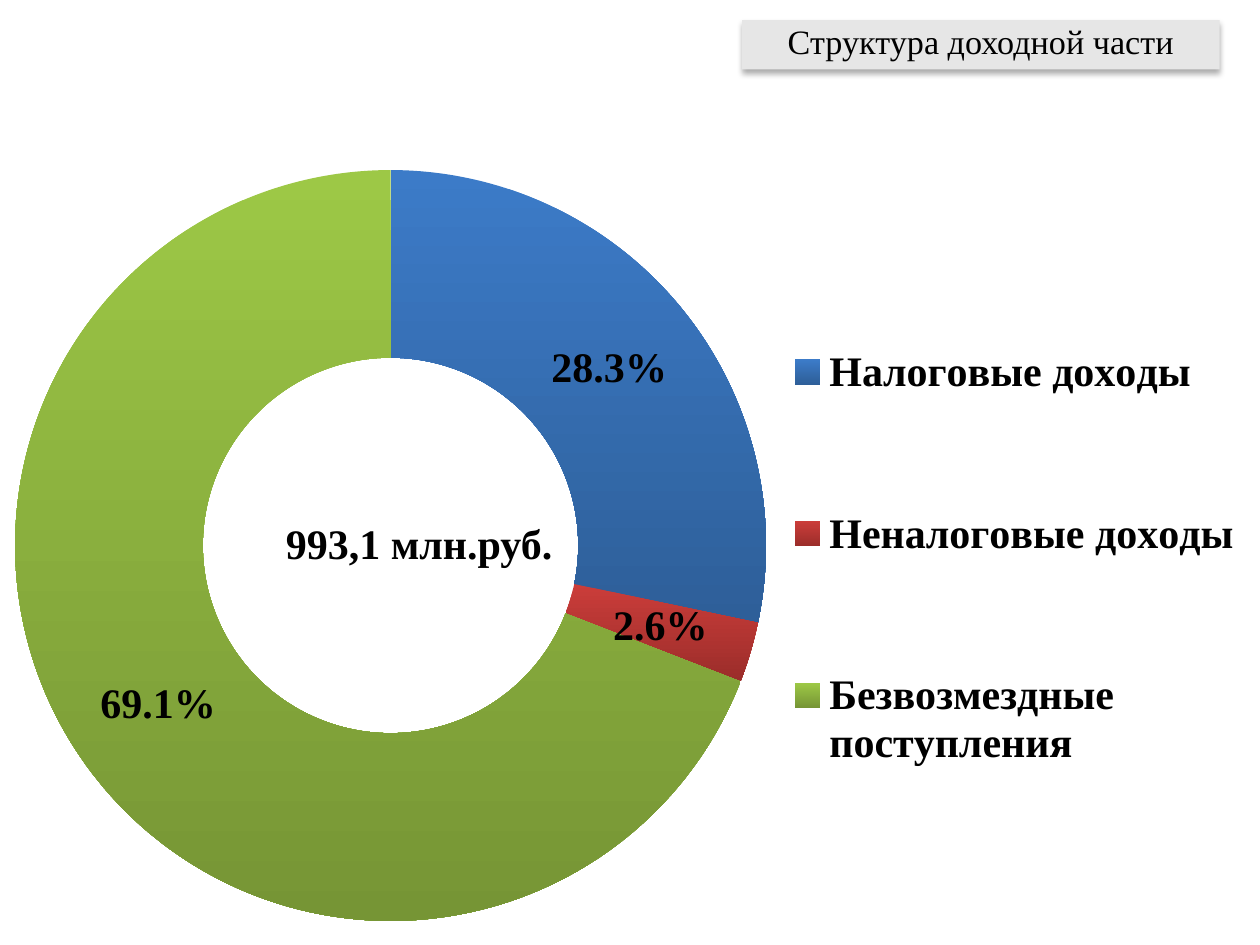
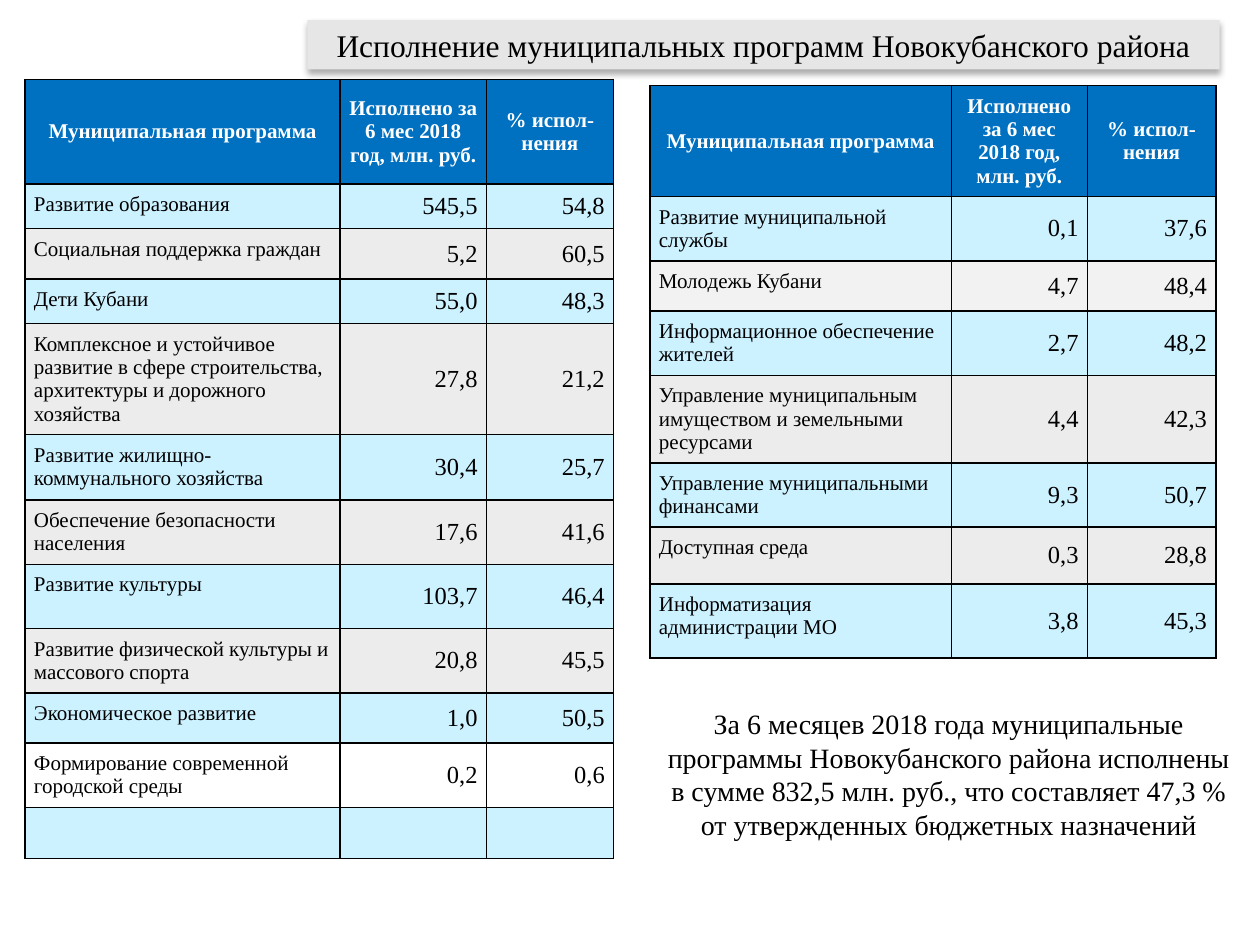
"""Builds two slides on district budget income and municipal programmes."""
from dataclasses import dataclass

from lxml import etree
from pptx import Presentation
from pptx import util as u
from pptx.chart.data import CategoryChartData
from pptx.dml.color import RGBColor
from pptx.enum import chart as charts
from pptx.enum import text
from pptx.oxml import parse_xml
from pptx.oxml.ns import nsdecls, qn

FONT = "Times New Roman"
BLACK = RGBColor(0x00, 0x00, 0x00)
WHITE = RGBColor(0xFF, 0xFF, 0xFF)
BAND_GREY = RGBColor(0xE6, 0xE6, 0xE6)
HEADER_BLUE = RGBColor(0x00, 0x70, 0xC0)
ROW_BLUE = RGBColor(0xCD, 0xF2, 0xFF)
ROW_GREY = RGBColor(0xEC, 0xEC, 0xEC)
ROW_PALE = RGBColor(0xF2, 0xF2, 0xF2)
LEFT, CENTER, RIGHT = text.PP_ALIGN.LEFT, text.PP_ALIGN.CENTER, text.PP_ALIGN.RIGHT
TOP, MIDDLE = text.MSO_ANCHOR.TOP, text.MSO_ANCHOR.MIDDLE
CELL_MARGIN = u.Inches(0.07)


@dataclass
class Income:
    """One income source with its share and gradient colours."""
    name: str
    share: float
    light: RGBColor
    dark: RGBColor


@dataclass
class Programme:
    """One row of a programme table; tint applies to even-numbered rows."""
    name: str
    spent: str
    percent: str
    height: float
    tint: RGBColor = ROW_GREY


@dataclass
class ProgrammeTable:
    """Place, header and rows of a programme table."""
    left: float
    top: float
    columns: list[float]
    spent_header: str
    header_height: float
    rows: list[Programme]


INCOMES = [
    Income("Налоговые доходы", 28.3, RGBColor(0x3C, 0x7B, 0xC8), RGBColor(0x2E, 0x5F, 0x99)),
    Income("Неналоговые доходы", 2.6, RGBColor(0xCB, 0x3D, 0x3A), RGBColor(0x9B, 0x2D, 0x2A)),
    Income("Безвозмездные поступления", 69.1, RGBColor(0x9D, 0xC8, 0x46), RGBColor(0x76, 0x95, 0x35)),
]

LEFT_TABLE = ProgrammeTable(
    0.2, 0.63, [2.5, 1.16, 1.01], "Исполнено за 6 мес 2018 год, млн. руб.", 0.83, [
        Programme("Развитие образования", "545,5", "54,8", 0.35),
        Programme("Социальная поддержка граждан", "5,2", "60,5", 0.4),
        Programme("Дети Кубани", "55,0", "48,3", 0.35),
        Programme("Комплексное и устойчивое развитие в сфере строительства, "
                  "архитектуры и дорожного хозяйства", "27,8", "21,2", 0.87),
        Programme("Развитие жилищно-коммунального хозяйства", "30,4", "25,7", 0.52),
        Programme("Обеспечение безопасности населения", "17,6", "41,6", 0.5),
        Programme("Развитие культуры", "103,7", "46,4", 0.51),
        Programme("Развитие физической культуры и массового спорта", "20,8", "45,5", 0.51),
        Programme("Экономическое развитие", "1,0", "50,5", 0.4),
        Programme("Формирование современной городской среды", "0,2", "0,6", 0.5, WHITE),
        Programme("", "", "", 0.4),
    ])

RIGHT_TABLE = ProgrammeTable(
    5.16, 0.68, [2.39, 1.08, 1.02], "Исполнено за 6 мес 2018 год, млн. руб.", 0.87, [
        Programme("Развитие муниципальной службы", "0,1", "37,6", 0.51),
        Programme("Молодежь Кубани", "4,7", "48,4", 0.4, ROW_PALE),
        Programme("Информационное обеспечение жителей", "2,7", "48,2", 0.5),
        Programme("Управление муниципальным имуществом и земельными ресурсами", "4,4", "42,3", 0.69),
        Programme("Управление муниципальными финансами", "9,3", "50,7", 0.5),
        Programme("Доступная среда", "0,3", "28,8", 0.45),
        Programme("Информатизация администрации МО", "3,8", "45,3", 0.59),
    ])


def write(frame, words: str, *, size: float, color: RGBColor = BLACK, bold: bool = False,
          align=LEFT, anchor=TOP, spacing: float | None = None) -> None:
    """Put one formatted paragraph into a text frame."""
    frame.word_wrap = True
    frame.vertical_anchor = anchor
    para = frame.paragraphs[0]
    para.alignment = align
    if spacing:
        para.line_spacing = spacing
    span = para.add_run()
    span.text = words
    span.font.name, span.font.size, span.font.bold = FONT, u.Pt(size), bold
    span.font.color.rgb = color


def add_page(deck, title: str, left: float, width: float, size: float, spacing: float | None = None):
    """Add a slide with its title on a shadowed grey band."""
    page = deck.slides.add_slide(deck.slide_layouts[5])
    band = page.shapes.title
    band.left, band.top = u.Inches(left), u.Inches(0.16)
    band.width, band.height = u.Inches(width), u.Inches(0.39)
    band.fill.solid()
    band.fill.fore_color.rgb = BAND_GREY
    band.line.fill.background()
    band.shadow.inherit = False
    band.element.spPr.find(qn("a:effectLst")).append(parse_xml(
        f'<a:outerShdw {nsdecls("a")} blurRad="{u.Pt(3.5)}" dist="{u.Pt(2.2)}" dir="5400000" '
        'rotWithShape="0"><a:srgbClr val="000000"><a:alpha val="32000"/></a:srgbClr></a:outerShdw>'))
    band.text_frame.auto_size = text.MSO_AUTO_SIZE.NONE
    write(band.text_frame, title, size=size, align=CENTER, anchor=MIDDLE, spacing=spacing)
    return page


def add_note(page, words: str, left: float, top: float, width: float, height: float, **style) -> None:
    """Add a text box."""
    box = page.shapes.add_textbox(u.Inches(left), u.Inches(top), u.Inches(width), u.Inches(height))
    write(box.text_frame, words, **style)


def set_layout(part, x: float, y: float, w: float, h: float, inner: bool = False) -> None:
    """Fix a chart part in place by fractions of the chart area."""
    old = part.find(qn("c:layout"))
    if old is not None:
        part.remove(old)
    layout = parse_xml(f'<c:layout {nsdecls("c")}><c:manualLayout/></c:layout>')
    settings = {"layoutTarget": "inner"} if inner else {}
    settings |= {"xMode": "edge", "yMode": "edge", "x": x, "y": y, "w": w, "h": h}
    for name, value in settings.items():
        etree.SubElement(layout[0], qn(f"c:{name}")).set("val", str(value))
    legend_position = part.find(qn("c:legendPos"))
    if legend_position is None:
        part.insert(0, layout)
    else:
        legend_position.addnext(layout)


def add_income_chart(page, incomes: list[Income]) -> None:
    """Add the doughnut of income shares."""
    data = CategoryChartData()
    data.categories = [income.name for income in incomes]
    data.add_series("Series 1", [income.share for income in incomes])
    chart = page.shapes.add_chart(charts.XL_CHART_TYPE.DOUGHNUT, u.Inches(0), u.Inches(1.16),
                                  u.Inches(10), u.Inches(6.34), data).chart
    chart.has_title = False
    chart.font.name, chart.font.size, chart.font.bold = FONT, u.Pt(24), True
    chart.font.color.rgb = BLACK
    chart.has_legend = True
    chart.legend.position = charts.XL_LEGEND_POSITION.RIGHT
    chart.legend.include_in_layout = False
    plot = chart.plots[0]
    plot.vary_by_categories = True
    plot.has_data_labels = True
    labels = plot.data_labels
    labels.show_percentage, labels.show_value = True, False
    labels.number_format, labels.number_format_is_linked = "0.0%", False
    for index, income in enumerate(incomes):
        fill = plot.series[0].points[index].format.fill
        fill.gradient()
        fill.gradient_angle = 270
        for stop, color in zip(fill.gradient_stops, (income.light, income.dark)):
            stop.color.rgb = color
    area = chart.element.find(qn("c:chart")).find(qn("c:plotArea"))
    area.find(qn("c:doughnutChart")).find(qn("c:holeSize")).set("val", "50")
    set_layout(area, 0.01, 0.03, 0.6, 0.94, inner=True)
    set_layout(chart.legend._element, 0.62, 0.11, 0.37, 0.81)


def style_cell(cell, words: str, fill: RGBColor, **style) -> None:
    """Fill, border and write one table cell."""
    cell.fill.solid()
    cell.fill.fore_color.rgb = fill
    properties = cell._tc.get_or_add_tcPr()
    for index, side in enumerate(("lnL", "lnR", "lnT", "lnB")):
        properties.insert(index, parse_xml(
            f'<a:{side} {nsdecls("a")} w="{u.Pt(1)}"><a:solidFill><a:srgbClr val="{BLACK}"/>'
            f'</a:solidFill></a:{side}>'))
    if words:
        cell.margin_left = cell.margin_right = cell.margin_top = cell.margin_bottom = CELL_MARGIN
        cell.vertical_anchor = style.pop("anchor", MIDDLE)
        write_cell = {"size": 12, **style}
        para = cell.text_frame.paragraphs[0]
        para.alignment = write_cell["align"]
        span = para.add_run()
        span.text = words
        span.font.name, span.font.size = FONT, u.Pt(write_cell["size"])
        span.font.bold = write_cell.get("bold", False)
        span.font.color.rgb = write_cell.get("color", BLACK)


def add_programme_table(page, plan: ProgrammeTable) -> None:
    """Add a programme table with a blue header and alternating rows."""
    heights = [plan.header_height] + [row.height for row in plan.rows]
    table = page.shapes.add_table(len(heights), len(plan.columns), u.Inches(plan.left), u.Inches(plan.top),
                                  u.Inches(sum(plan.columns)), u.Inches(sum(heights))).table
    for column, width in zip(table.columns, plan.columns):
        column.width = u.Inches(width)
    for row, height in zip(table.rows, heights):
        row.height = u.Inches(height)
    headers = ("Муниципальная программа", plan.spent_header, "% испол-нения")
    for index, words in enumerate(headers):
        style_cell(table.cell(0, index), words, HEADER_BLUE, color=WHITE, bold=True, align=CENTER)
    for number, row in enumerate(plan.rows, start=1):
        fill = ROW_BLUE if number % 2 else row.tint
        style_cell(table.cell(number, 0), row.name, fill, align=LEFT, anchor=TOP)
        for index, words in enumerate((row.spent, row.percent), start=1):
            style_cell(table.cell(number, index), words, fill, size=14, align=RIGHT)


def main() -> None:
    """Build and save the deck."""
    deck = Presentation()
    deck.slide_width, deck.slide_height = u.Inches(10), u.Inches(7.5)

    income_page = add_page(deck, "Структура доходной части", 5.89, 3.79, 19.5, spacing=0.8)
    add_income_chart(income_page, INCOMES)
    add_note(income_page, "993,1 млн.руб.", 2.17, 4.06, 2.99, 0.5, size=24, bold=True)

    programme_page = add_page(deck, "Исполнение муниципальных программ Новокубанского района", 2.44, 7.24, 18)
    for plan in (RIGHT_TABLE, LEFT_TABLE):
        add_programme_table(programme_page, plan)
    add_note(programme_page, "За 6 месяцев 2018 года муниципальные программы Новокубанского района исполнены "
             "в сумме 832,5 млн. руб., что составляет 47,3 % от утвержденных бюджетных назначений",
             5.16, 5.56, 4.74, 1.18, size=16, align=CENTER)
    deck.save("out.pptx")


if __name__ == "__main__":
    main()
